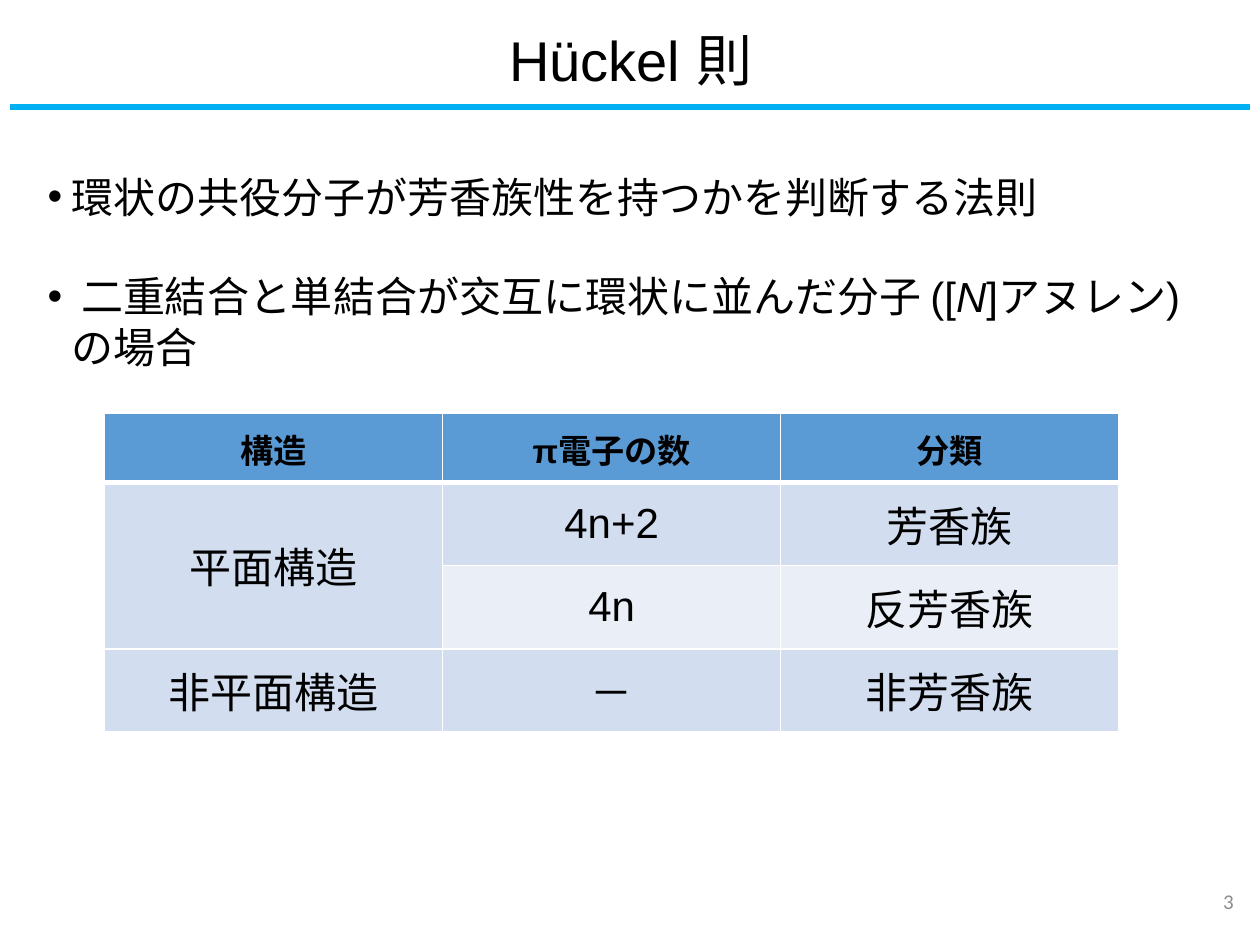
from dataclasses import dataclass

from lxml import etree
from pptx import Presentation
from pptx.dml.color import RGBColor
from pptx.enum.shapes import MSO_CONNECTOR
from pptx.enum.text import MSO_ANCHOR, PP_ALIGN
from pptx.oxml.ns import qn
from pptx.util import Inches, Pt

LEFT, CENTER, RIGHT = PP_ALIGN.LEFT, PP_ALIGN.CENTER, PP_ALIGN.RIGHT
TOP, MIDDLE = MSO_ANCHOR.TOP, MSO_ANCHOR.MIDDLE
STRAIGHT = MSO_CONNECTOR.STRAIGHT


@dataclass(frozen=True)
class Theme:
    font: str = "Arial"
    number_font: str = "Calibri"
    ink: str = "000000"
    muted: str = "8C8C8C"
    rule: str = "00B0F0"
    header: str = "5B9BD5"
    band: str = "D2DEEF"
    light_band: str = "EAEFF7"
    border: str = "FFFFFF"
    title_size: int = 32
    body_size: int = 24
    header_size: int = 19
    number_size: int = 12


THEME = Theme()
ROWS = [
    ("構造", "π電子の数", "分類"),
    ("平面構造", "4n+2", "芳香族"),
    ("", "4n", "反芳香族"),
    ("非平面構造", "－", "非芳香族"),
]


def add_run(paragraph, text, size, color=THEME.ink, font=THEME.font, bold=False, italic=False):
    run = paragraph.add_run()
    run.text = text
    run.font.name, run.font.size = font, Pt(size)
    run.font.bold, run.font.italic = bold, italic
    run.font.color.rgb = RGBColor.from_string(color)


def add_paragraph_box(slide, box, align=LEFT, anchor=TOP):
    """Adds a wrapping text box and returns its first paragraph."""
    frame = slide.shapes.add_textbox(*map(Inches, box)).text_frame
    frame.word_wrap = True
    frame.vertical_anchor = anchor
    paragraph = frame.paragraphs[0]
    paragraph.alignment = align
    return paragraph


def add_title(slide, box):
    title = add_paragraph_box(slide, box, CENTER, MIDDLE)
    add_run(title, "Hückel 則", THEME.title_size)


def add_title_rule(slide, left, right, y):
    rule = slide.shapes.add_connector(STRAIGHT, Inches(left), Inches(y), Inches(right), Inches(y))
    rule.line.color.rgb = RGBColor.from_string(THEME.rule)
    rule.line.width = Pt(3)
    etree.SubElement(rule._element.spPr, qn("a:effectLst"))


def add_bullet(slide, box, parts, hang=0):
    """Adds one bullet from (text, italic) parts with a hanging indent in inches."""
    bullet = add_paragraph_box(slide, box)
    properties = bullet._p.get_or_add_pPr()
    properties.set("marL", str(Inches(hang)))
    properties.set("indent", str(-Inches(hang)))
    etree.SubElement(properties, qn("a:buFont"), typeface=THEME.font)
    etree.SubElement(properties, qn("a:buChar"), char="•")
    for text, italic in parts:
        add_run(bullet, text, THEME.body_size, italic=italic)


def set_borders(cell, top, bottom):
    properties = cell._tc.get_or_add_tcPr()
    for side, width in (("L", 1), ("R", 1), ("T", top), ("B", bottom)):
        line = etree.SubElement(properties, qn(f"a:ln{side}"), w=str(Pt(width)))
        fill = etree.SubElement(line, qn("a:solidFill"))
        etree.SubElement(fill, qn("a:srgbClr"), val=THEME.border)


def add_classification_table(slide, box):
    table = slide.shapes.add_table(len(ROWS), len(ROWS[0]), *map(Inches, box)).table
    fills = (THEME.header, THEME.band, THEME.light_band, THEME.band)
    heights = (0.55, 0.66, 0.66, 0.66)
    for r, (labels, fill, height) in enumerate(zip(ROWS, fills, heights)):
        table.rows[r].height = Inches(height)
        for c, label in enumerate(labels):
            cell = table.cell(r, c)
            set_borders(cell, top=3 if r == 1 else 1, bottom=3 if r == 0 else 1)
            cell.fill.solid()
            cell.fill.fore_color.rgb = RGBColor.from_string(fill)
            cell.vertical_anchor = MIDDLE
            cell.margin_left = cell.margin_right = Inches(0.18)
            cell.margin_top = cell.margin_bottom = Inches(0.09)
            if label:
                paragraph = cell.text_frame.paragraphs[0]
                paragraph.alignment = CENTER
                size = THEME.header_size if r == 0 else THEME.body_size
                add_run(paragraph, label, size, bold=r == 0)
    table.cell(1, 0).merge(table.cell(2, 0))


def add_page_number(slide, box):
    number = add_paragraph_box(slide, box, RIGHT, MIDDLE)
    add_run(number, "3", THEME.number_size, THEME.muted, THEME.number_font)


def main():
    deck = Presentation()
    deck.slide_width, deck.slide_height = Inches(10), Inches(7.5)
    slide = deck.slides.add_slide(deck.slide_layouts[6])
    add_title(slide, (0.28, 0.07, 9.45, 0.79))
    add_page_number(slide, (7.56, 6.95, 2.33, 0.4))
    add_title_rule(slide, 0.08, 9.92, 0.85)
    add_classification_table(slide, (0.83, 3.28, 8.05, 2.53))
    add_bullet(slide, (0.28, 1.31, 9.45, 0.55),
               [(" 環状の共役分子が芳香族性を持つかを判断する法則", False)])
    add_bullet(slide, (0.28, 2.1, 9.45, 1.02),
               [(" 二重結合と単結合が交互に環状に並んだ分子 ([", False),
                ("N", True), ("]アヌレン) の場合", False)], hang=0.19)
    deck.save("out.pptx")


if __name__ == "__main__":
    main()
